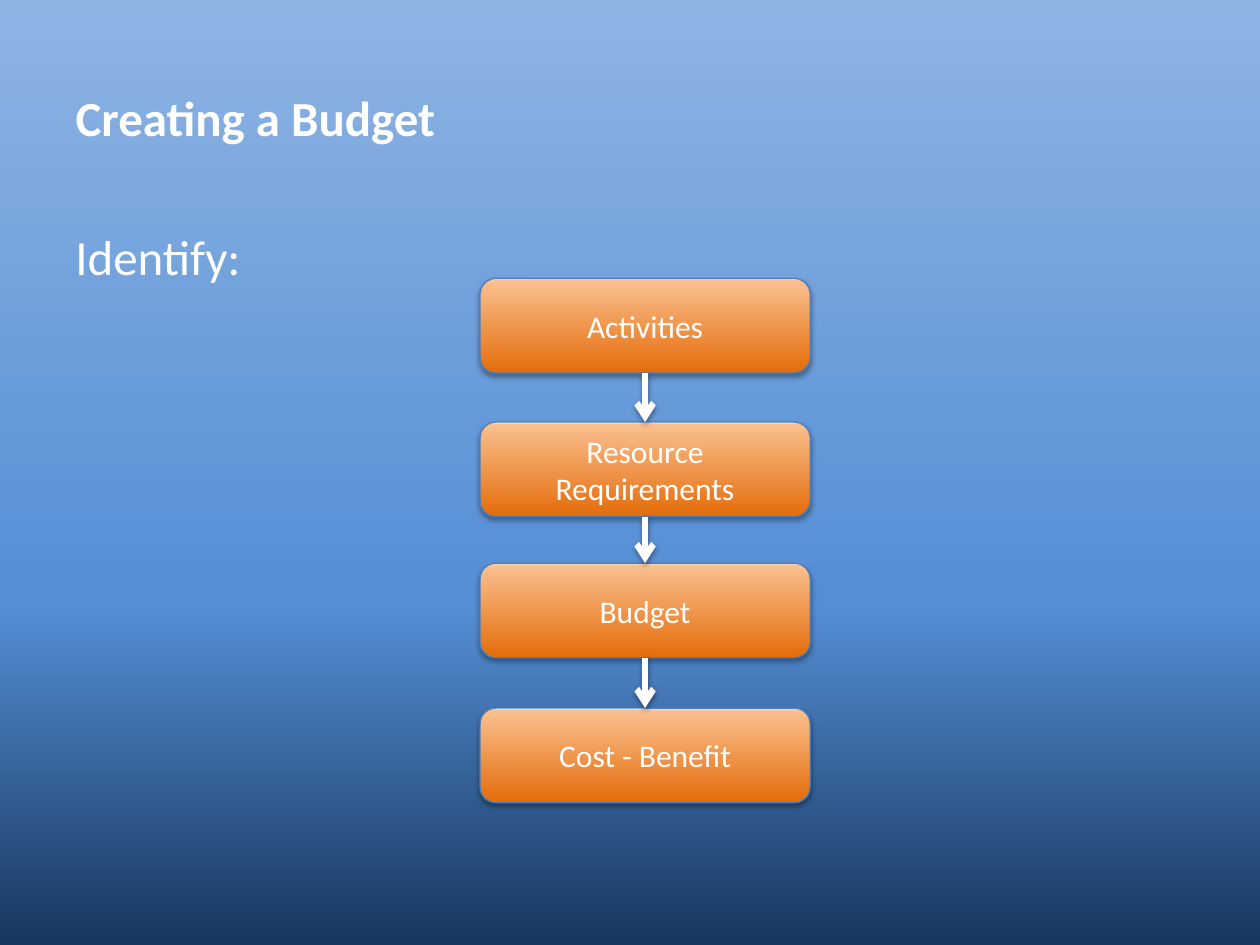
import pptx
import pptx.util
import pptx.dml.color
import pptx.enum.shapes
import pptx.enum.text
import pptx.oxml
import pptx.oxml.ns

Inches, Pt = pptx.util.Inches, pptx.util.Pt
PP_ALIGN = pptx.enum.text.PP_ALIGN
ANCHOR = pptx.enum.text.MSO_ANCHOR
NS = pptx.oxml.ns.nsdecls("a")

TITLE = "Creating a Budget"
PROMPT = "Identify:"
STEPS = [
    ("Activities", 2.21),
    ("Resource Requirements", 3.35),
    ("Budget", 4.47),
    ("Cost - Benefit", 5.62),
]
BOX_LEFT, BOX_W, BOX_H = 3.81, 2.62, 0.75
SKY = [(0, "17375E"), (36, "558ED5"), (100, "8EB4E3")]
ORANGE = [(0, "E46C0A"), (98, "FAC090"), (100, "FFFFFF")]
WHITE, BORDER = "FFFFFF", "4B7EBC"


def rgb(value):
    return pptx.dml.color.RGBColor.from_string(value)


def set_gradient(fill, element, stops):
    fill.gradient()
    grad = element.xpath(".//a:gradFill")[0]
    for child in list(grad):
        grad.remove(child)
    gs = "".join(
        f'<a:gs pos="{pos * 1000}"><a:srgbClr val="{color}"/></a:gs>'
        for pos, color in stops
    )
    grad.append(pptx.oxml.parse_xml(f"<a:gsLst {NS}>{gs}</a:gsLst>"))
    grad.append(pptx.oxml.parse_xml(f'<a:lin {NS} ang="16200000" scaled="0"/>'))


def add_shadow(sp, alpha, dist):
    sp._element.spPr.append(pptx.oxml.parse_xml(
        f'<a:effectLst {NS}><a:outerShdw blurRad="{Pt(3.1)}" dist="{Pt(dist)}" '
        f'dir="5400000" rotWithShape="0"><a:srgbClr val="000000">'
        f'<a:alpha val="{alpha * 1000}"/></a:srgbClr></a:outerShdw></a:effectLst>'))


def write(sp, text, size, align, anchor, bold=False):
    tf = sp.text_frame
    tf.word_wrap = True
    tf.vertical_anchor = anchor
    p = tf.paragraphs[0]
    p.text = text
    p.alignment = align
    p.font.name = "Calibri"
    p.font.size = Pt(size)
    p.font.bold = bold
    p.font.color.rgb = rgb(WHITE)
    return p


def add_step(slide, text, top):
    sp = slide.shapes.add_shape(
        pptx.enum.shapes.MSO_SHAPE.ROUNDED_RECTANGLE,
        Inches(BOX_LEFT), Inches(top), Inches(BOX_W), Inches(BOX_H))
    set_gradient(sp.fill, sp._element, ORANGE)
    sp.line.color.rgb = rgb(BORDER)
    sp.line.width = Pt(0.75)
    add_shadow(sp, 35, 1.8)
    write(sp, text, 18, PP_ALIGN.CENTER, ANCHOR.MIDDLE)
    return sp


def add_arrow(slide, upper, lower):
    line = slide.shapes.add_connector(
        pptx.enum.shapes.MSO_CONNECTOR.STRAIGHT, 0, 0, 0, 0)
    line.begin_connect(upper, 2)
    line.end_connect(lower, 0)
    line.line.color.rgb = rgb(WHITE)
    line.line.width = Pt(3.5)
    line.line._get_or_add_ln().append(
        pptx.oxml.parse_xml(f'<a:tailEnd {NS} type="arrow"/>'))
    add_shadow(line, 38, 1.6)


def main():
    prs = pptx.Presentation()
    prs.slide_width, prs.slide_height = Inches(10), Inches(7.5)
    slide = prs.slides.add_slide(prs.slide_layouts[5])
    set_gradient(slide.background.fill, slide._element, SKY)

    title = slide.shapes.title
    title.left, title.top = Inches(0.5), Inches(0.3)
    title.width, title.height = Inches(9), Inches(1.25)
    write(title, TITLE, 28, PP_ALIGN.LEFT, ANCHOR.MIDDLE, bold=True)

    prompt = slide.shapes.add_textbox(
        Inches(0.5), Inches(1.75), Inches(9), Inches(4.95))
    p = write(prompt, PROMPT, 28, PP_ALIGN.LEFT, ANCHOR.TOP)
    p.space_before = Pt(5.6)

    boxes = [add_step(slide, text, top) for text, top in STEPS]
    for upper, lower in zip(boxes, boxes[1:]):
        add_arrow(slide, upper, lower)
    prs.save("out.pptx")


if __name__ == "__main__":
    main()
